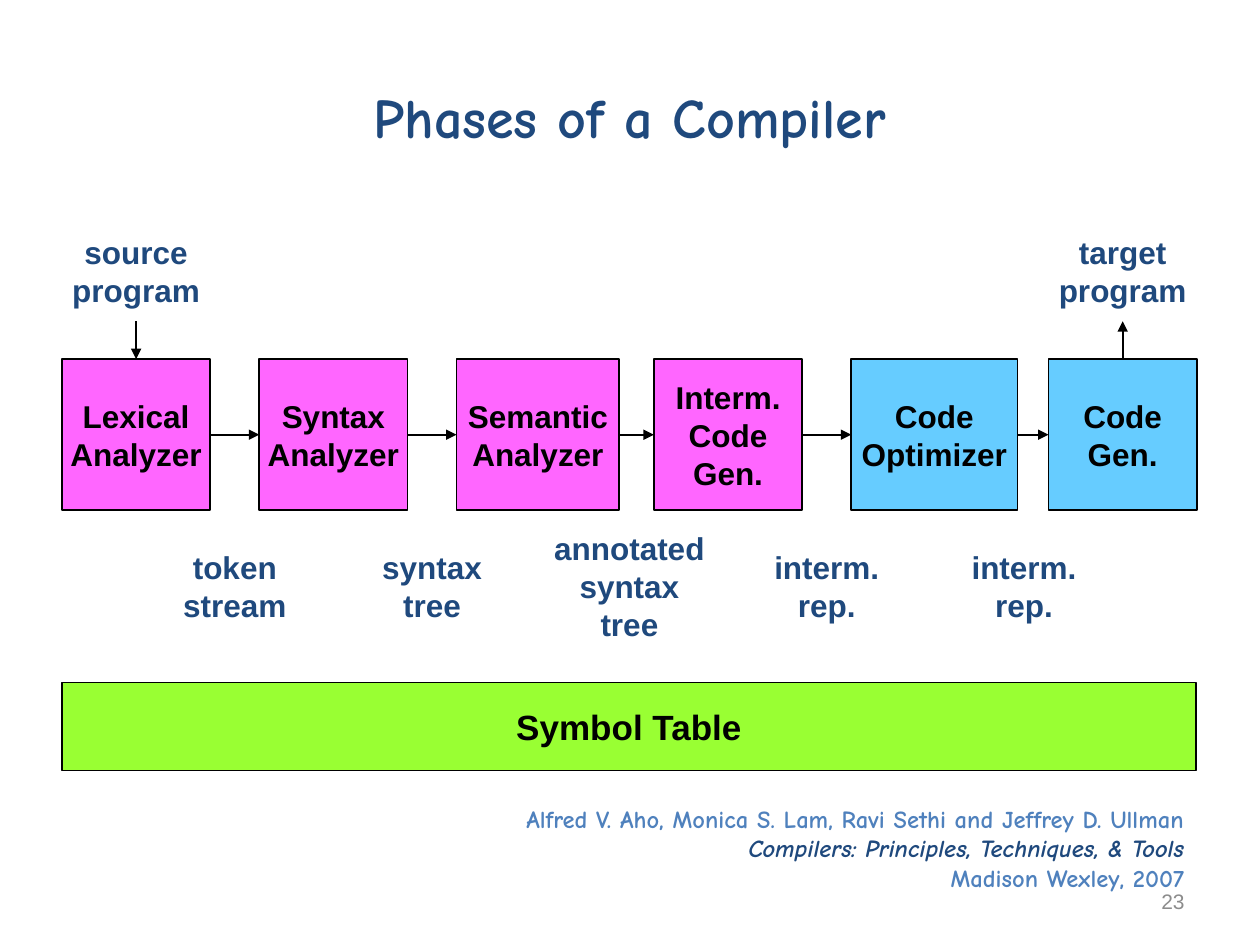
import pptx
import pptx.dml.color
import pptx.enum.shapes
import pptx.enum.text
import pptx.oxml
import pptx.oxml.ns
import pptx.util
from dataclasses import dataclass

Pt = pptx.util.Pt
ALIGN = pptx.enum.text.PP_ALIGN
ANCHOR = pptx.enum.text.MSO_ANCHOR
TOP, LEFT, BOTTOM, RIGHT = range(4)

NAVY, BLUE, BLACK, GREY, WHITE = "1F497D", "4F81BD", "000000", "8C8C8C", "FFFFFF"
PINK, SKY, LIME = "FF66FF", "66CCFF", "99FF33"
X0, PITCH = 35.4, 112.75
BOX_Y, BOX_W, BOX_H = 205.2, 84.8, 86.4
TAG_W, TAG_H = 70.6, 57.6
IO_Y, TAG_Y = 126, 306


@dataclass
class Run:
    text: str
    size: float = 18
    color: str = BLACK
    font: str = "Arial"
    bold: bool = True
    italic: bool = False


@dataclass
class Phase:
    lines: list[str]
    fill: str
    width: float = BOX_W


PHASES = [
    Phase(["Lexical", "Analyzer"], PINK),
    Phase(["Syntax", "Analyzer"], PINK),
    Phase(["Semantic", "Analyzer"], PINK, 93),
    Phase(["Interm.", "Code", "Gen."], PINK),
    Phase(["Code", "Optimizer"], SKY, 95),
    Phase(["Code", "Gen."], SKY),
]
TAGS = [
    ["token", "stream"],
    ["syntax", "tree"],
    ["annotated", "syntax", "tree"],
    ["interm.", "rep."],
    ["interm.", "rep."],
]


def rgb(code: str) -> pptx.dml.color.RGBColor:
    return pptx.dml.color.RGBColor.from_string(code)


def write(shape, runs: list[Run], align=ALIGN.CENTER, anchor=ANCHOR.MIDDLE,
          wrap: bool = False) -> None:
    """Fill the shape with one paragraph for each run."""
    frame = shape.text_frame
    frame.word_wrap = wrap
    frame.vertical_anchor = anchor
    for i, item in enumerate(runs):
        para = frame.paragraphs[0] if i == 0 else frame.add_paragraph()
        para.alignment = align
        run = para.add_run()
        run.text = item.text
        font = run.font
        font.name, font.size = item.font, Pt(item.size)
        font.bold, font.italic = item.bold, item.italic
        font.color.rgb = rgb(item.color)


def add_note(slide, x: float, y: float, w: float, h: float,
             runs: list[Run], anchor=ANCHOR.MIDDLE) -> None:
    """Add a wrapped, right-aligned text box."""
    box = slide.shapes.add_textbox(Pt(x), Pt(y), Pt(w), Pt(h))
    write(box, runs, ALIGN.RIGHT, anchor, wrap=True)


def add_box(slide, x: float, y: float, w: float, h: float, runs: list[Run],
            fill: str = "", edge: str = "", width: float = 1):
    """Add a rectangle; an empty colour leaves that part undrawn."""
    kind = pptx.enum.shapes.MSO_SHAPE.RECTANGLE
    box = slide.shapes.add_shape(kind, Pt(x), Pt(y), Pt(w), Pt(h))
    box.shadow.inherit = False
    if fill:
        box.fill.solid()
        box.fill.fore_color.rgb = rgb(fill)
    else:
        box.fill.background()
    if edge:
        box.line.color.rgb = rgb(edge)
        box.line.width = Pt(width)
    else:
        box.line.fill.background()
    write(box, runs)
    return box


def add_arrow(slide, start, start_side: int, end, end_side: int) -> None:
    """Join the middles of two sides, with the head at the end."""
    kind = pptx.enum.shapes.MSO_CONNECTOR.STRAIGHT
    line = slide.shapes.add_connector(kind, 0, 0, 0, 0)
    line.begin_connect(start, start_side)
    line.end_connect(end, end_side)
    line.line.color.rgb = rgb(BLACK)
    line.line.width = Pt(1)
    tail = pptx.oxml.parse_xml(
        f'<a:tailEnd {pptx.oxml.ns.nsdecls("a")} type="triangle"/>')
    line.line._get_or_add_ln().append(tail)
    props = line._element.spPr
    props.append(pptx.oxml.parse_xml(
        f'<a:effectLst {pptx.oxml.ns.nsdecls("a")}/>'))


def main() -> None:
    deck = pptx.Presentation()
    deck.slide_width, deck.slide_height = Pt(720), Pt(540)
    slide = deck.slides.add_slide(deck.slide_layouts[6])

    add_box(slide, 36, 21.6, 648, 90,
            [Run("Phases of a Compiler", 32, NAVY, "Comic Neue")],
            edge=WHITE, width=0.75)

    boxes = [
        add_box(slide, X0 + i * PITCH, BOX_Y, phase.width, BOX_H,
                [Run(line) for line in phase.lines], phase.fill, BLACK)
        for i, phase in enumerate(PHASES)
    ]
    for left, right in zip(boxes, boxes[1:]):
        add_arrow(slide, left, RIGHT, right, LEFT)

    source, target = [
        add_box(slide, X0 + i * PITCH, IO_Y, BOX_W, TAG_H,
                [Run(word, color=NAVY), Run("program", color=NAVY)])
        for i, word in ((0, "source"), (len(PHASES) - 1, "target"))
    ]
    add_arrow(slide, source, BOTTOM, boxes[0], TOP)
    add_arrow(slide, boxes[-1], TOP, target, BOTTOM)

    tag_x = X0 + (BOX_W + PITCH - TAG_W) / 2
    for i, tag in enumerate(TAGS):
        add_box(slide, tag_x + i * PITCH, TAG_Y, TAG_W, TAG_H,
                [Run(line, color=NAVY) for line in tag])

    add_box(slide, X0, 390, 648, 50.4, [Run("Symbol Table", 20)], LIME, BLACK)

    add_note(slide, 169.2, 455.8, 514.8, 58.3, [
        Run("Alfred V. Aho, Monica S. Lam, Ravi Sethi and Jeffrey D. Ullman",
            14, BLUE, "Comic Neue"),
        Run("Compilers: Principles, Techniques, & Tools",
            14, NAVY, "Comic Neue", italic=True),
        Run("Madison Wexley, 2007", 14, BLUE, "Comic Neue"),
    ], ANCHOR.TOP)
    add_note(slide, 516, 500.4, 168, 28.8, [Run("23", 12, GREY, bold=False)])

    deck.save("out.pptx")


if __name__ == "__main__":
    main()
